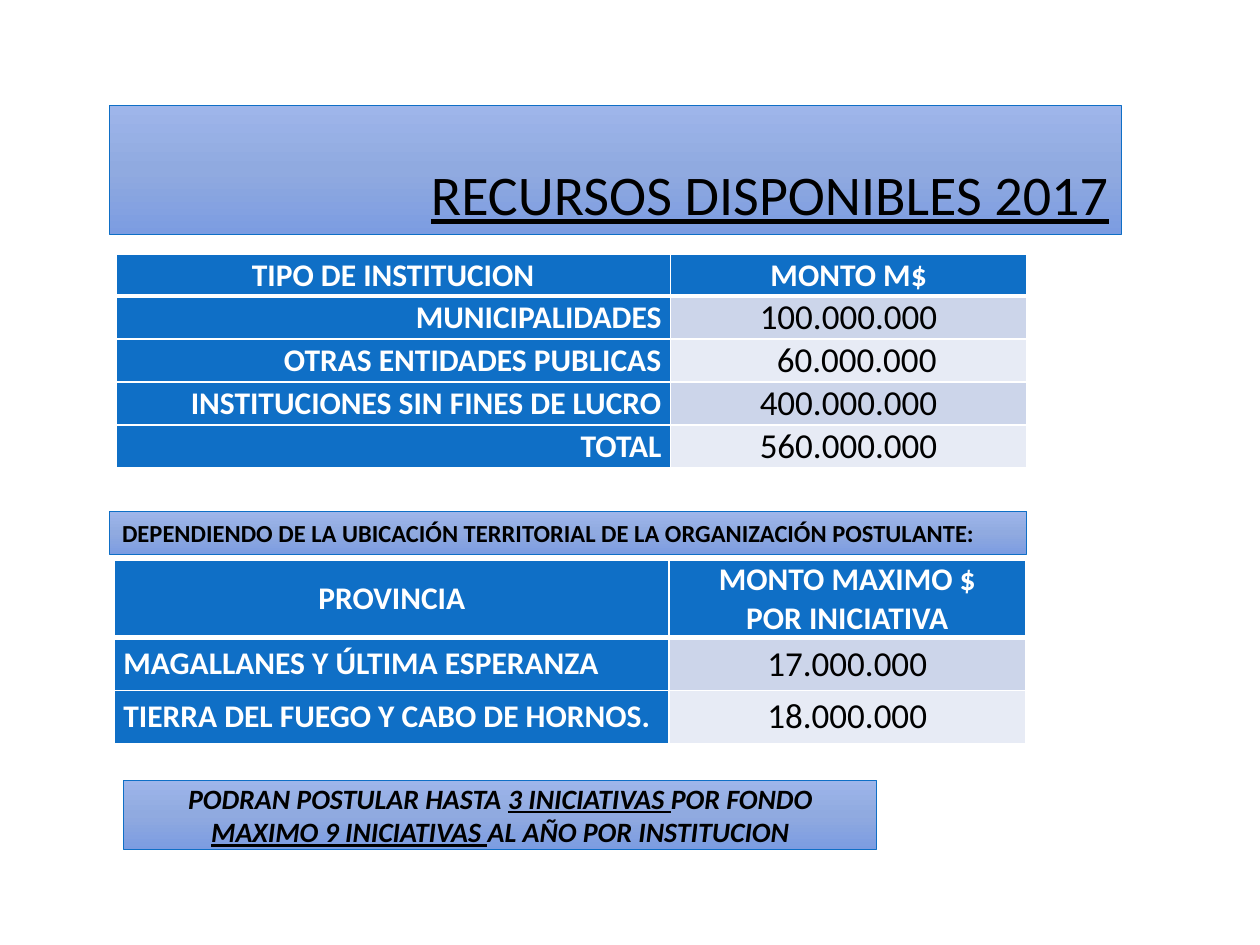
"""Build the slide of funds available in 2017, by institution and by province."""
from copy import deepcopy

from lxml import etree
from pptx import Presentation
from pptx.dml.color import RGBColor
from pptx.enum.shapes import MSO_SHAPE
from pptx.enum.text import MSO_ANCHOR, MSO_AUTO_SIZE, PP_ALIGN
from pptx.oxml.ns import qn
from pptx.util import Inches, Pt

RECTANGLE = MSO_SHAPE.RECTANGLE
TOP, MIDDLE, BOTTOM = MSO_ANCHOR.TOP, MSO_ANCHOR.MIDDLE, MSO_ANCHOR.BOTTOM
CENTER, RIGHT, JUSTIFY = PP_ALIGN.CENTER, PP_ALIGN.RIGHT, PP_ALIGN.JUSTIFY
NO_FIT = MSO_AUTO_SIZE.NONE

FONT = "Calibri"
BLACK = RGBColor(0x00, 0x00, 0x00)
WHITE = RGBColor(0xFF, 0xFF, 0xFF)
BLUE = RGBColor(0x0F, 0x6F, 0xC6)
BANDS = RGBColor(0xCC, 0xD5, 0xEA), RGBColor(0xE7, 0xEB, 0xF5)
GRADIENT = (
    (0, RGBColor(0x9E, 0xB5, 0xEA)),
    (0.5, RGBColor(0x90, 0xAA, 0xE0)),
    (1, RGBColor(0x7C, 0x9C, 0xE1)),
)

TITLE = "RECURSOS DISPONIBLES 2017"
INSTITUTIONS = [
    ("TIPO DE INSTITUCION", "MONTO M$"),
    ("MUNICIPALIDADES", "100.000.000"),
    ("OTRAS ENTIDADES PUBLICAS", "60.000.000"),
    ("INSTITUCIONES SIN FINES DE LUCRO", "400.000.000"),
    ("TOTAL", "560.000.000"),
]
LOCATION = "DEPENDIENDO DE LA UBICACIÓN TERRITORIAL DE LA ORGANIZACIÓN POSTULANTE:"
PROVINCES = [
    ("PROVINCIA", "MONTO MAXIMO $\nPOR INICIATIVA"),
    ("MAGALLANES Y ÚLTIMA ESPERANZA", "17.000.000"),
    ("TIERRA DEL FUEGO Y CABO DE HORNOS.", "18.000.000"),
]
LIMITS = [
    [("PODRAN POSTULAR HASTA ", False), ("3 INICIATIVAS ", True), ("POR FONDO", False)],
    [("MAXIMO 9 INICIATIVAS ", True), ("AL AÑO POR INSTITUCION", False)],
]

COLUMNS = 4.4, 2.83
SIDE_INSET = 0.07
AMOUNT_DIGITS = len("100.000.000")
DIGIT_INDENT = 0.13


def style_font(font, size, color, bold=False):
    font.name, font.size, font.bold = FONT, Pt(size), bold
    font.color.rgb = color


def style_banner(banner, anchor):
    banner.fill.gradient()
    banner.fill.gradient_angle = 270
    stops = banner._element.spPr.find(qn("a:gradFill")).find(qn("a:gsLst"))
    stops.insert(1, deepcopy(stops[0]))
    for stop, (position, color) in zip(banner.fill.gradient_stops, GRADIENT):
        stop.position = position
        stop.color.rgb = color
    banner.line.color.rgb = BLUE
    banner.line.width = Pt(0.5)
    frame = banner.text_frame
    frame.word_wrap = True
    frame.auto_size = NO_FIT
    frame.vertical_anchor = anchor
    return frame


def add_banner(slide, box, anchor, lines, size, align):
    banner = slide.shapes.add_shape(RECTANGLE, *map(Inches, box))
    banner.shadow.inherit = False
    frame = style_banner(banner, anchor)
    for index, line in enumerate(lines):
        paragraph = frame.add_paragraph() if index else frame.paragraphs[0]
        paragraph.alignment = align
        style_font(paragraph.font, size, BLACK, bold=True)
        for text, underlined in line:
            run = paragraph.add_run()
            run.text = text
            if underlined:
                run.font.underline = True
    return frame


def draw_borders(cell, is_header):
    properties = cell._tc.get_or_add_tcPr()
    for side in "LRTB":
        width = 3 if is_header and side == "B" else 1
        line = etree.SubElement(properties, qn(f"a:ln{side}"), w=str(Pt(width)))
        fill = etree.SubElement(line, qn("a:solidFill"))
        etree.SubElement(fill, qn("a:srgbClr"), val=str(WHITE))


def add_funds_table(slide, left, top, heights, rows, label_align):
    table = slide.shapes.add_table(
        len(rows), len(COLUMNS), Inches(left), Inches(top),
        Inches(sum(COLUMNS)), Inches(sum(heights))).table
    table.first_col = True
    for column, width in zip(table.columns, COLUMNS):
        column.width = Inches(width)
    for r, (row, height) in enumerate(zip(rows, heights)):
        table.rows[r].height = Inches(height)
        for c, text in enumerate(row):
            cell = table.cell(r, c)
            is_header, is_amount = r == 0, r > 0 and c > 0
            short = is_amount and label_align == RIGHT and len(text) < AMOUNT_DIGITS
            cell.text = text
            cell.vertical_anchor = MIDDLE
            cell.margin_top = cell.margin_bottom = 0
            cell.margin_right = Inches(SIDE_INSET)
            cell.margin_left = Inches(SIDE_INSET + (DIGIT_INDENT if short else 0))
            draw_borders(cell, is_header)
            cell.fill.solid()
            cell.fill.fore_color.rgb = BANDS[(r - 1) % 2] if is_amount else BLUE
            for paragraph in cell.text_frame.paragraphs:
                paragraph.alignment = CENTER if is_header or is_amount else label_align
                style_font(paragraph.font, 20 if is_amount else 18,
                           BLACK if is_amount else WHITE, bold=not is_amount)


def main():
    deck = Presentation()
    deck.slide_width, deck.slide_height = Inches(10), Inches(7.5)
    slide = deck.slides.add_slide(deck.slide_layouts[5])

    title = slide.shapes.title
    title.left, title.top, title.width, title.height = map(Inches, (0.87, 0.84, 8.03, 1.02))
    heading = style_banner(title, BOTTOM).paragraphs[0]
    heading.text = TITLE
    heading.alignment = RIGHT
    heading.line_spacing = 0.9
    heading.space_after = Pt(2)
    style_font(heading.font, 32, BLACK)
    heading.font.underline = True

    add_funds_table(slide, 0.92, 2.02, [0.33] * 5, INSTITUTIONS, RIGHT)
    add_banner(slide, (0.87, 4.06, 7.28, 0.34), TOP, [[(LOCATION, False)]], 14, JUSTIFY)
    add_funds_table(slide, 0.91, 4.45, [0.6, 0.42, 0.42], PROVINCES, JUSTIFY)
    limits = add_banner(slide, (0.98, 6.19, 5.98, 0.55), MIDDLE, LIMITS, 16, CENTER)
    for paragraph in limits.paragraphs:
        paragraph.font.italic = True

    deck.save("out.pptx")


if __name__ == "__main__":
    main()
